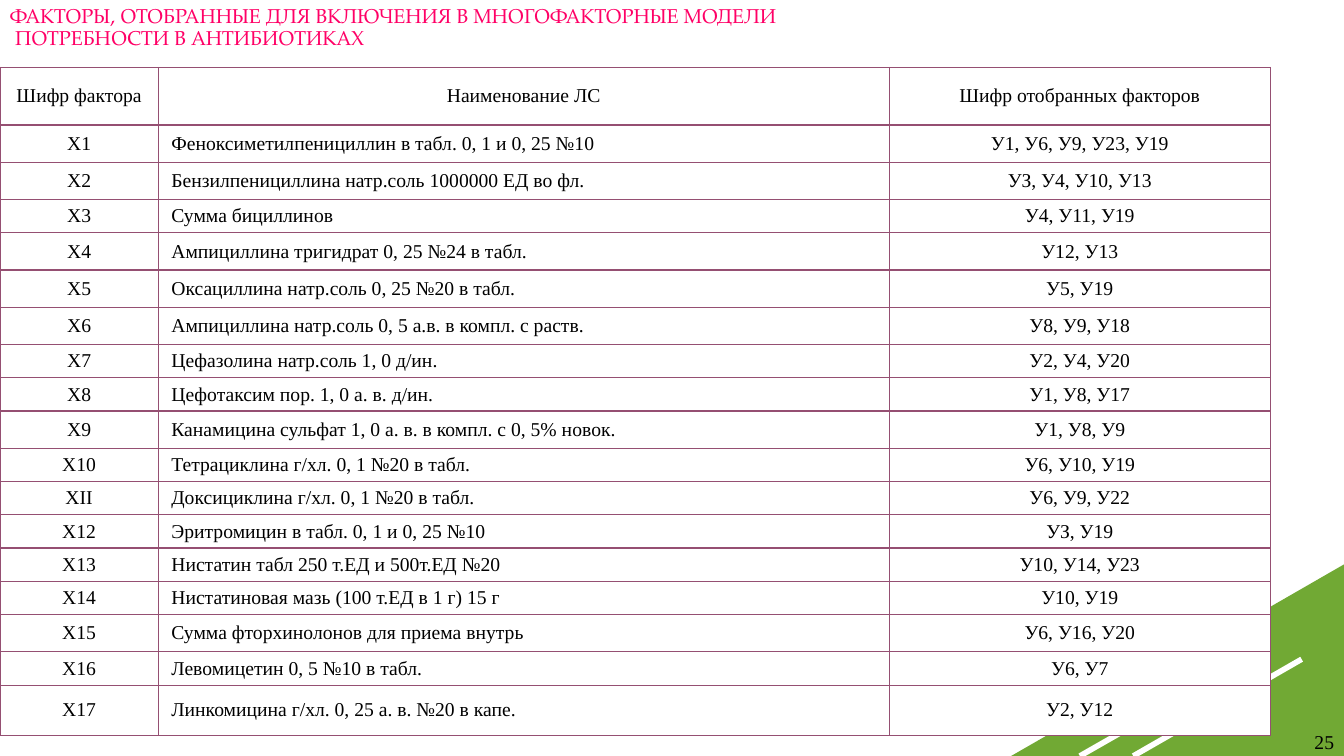
from lxml.etree import SubElement
from pptx import Presentation
from pptx.dml.color import RGBColor
from pptx.enum.shapes import MSO_CONNECTOR, MSO_SHAPE
from pptx.enum.text import MSO_ANCHOR, PP_ALIGN
from pptx.oxml.ns import qn
from pptx.util import Inches, Pt

COLORS = {
    "title": "FF0066",
    "text": "000000",
    "white": "FFFFFF",
    "green": "71A934",
    "border": "954F72",
}
TITLE_FONT = "TeX Gyre Pagella"
BODY_FONT = "Times New Roman"
COLUMN_WIDTHS = [1.57, 7.25, 3.78]
ROWS = [
    (0.57, "Шифр фактора", "Наименование ЛС", "Шифр отобранных факторов"),
    (0.37, "X1", "Феноксиметилпенициллин в табл. 0, 1 и 0, 25 №10", "У1, У6, У9, У23, У19"),
    (0.37, "Х2", "Бензилпенициллина натр.соль 1000000 ЕД во фл.", "УЗ, У4, У10, У13"),
    (0.33, "Х3", "Сумма бициллинов", "У4, У11, У19"),
    (0.37, "Х4", "Ампициллина тригидрат 0, 25 №24 в табл.", "У12, У13"),
    (0.37, "Х5", "Оксациллина натр.соль 0, 25 №20 в табл.", "У5, У19"),
    (0.37, "Х6", "Ампициллина натр.соль 0, 5 а.в. в компл. с раств.", "У8, У9, У18"),
    (0.33, "Х7", "Цефазолина натр.соль 1, 0 д/ин.", "У2, У4, У20"),
    (0.33, "Х8", "Цефотаксим пор. 1, 0 а. в. д/ин.", "У1, У8, У17"),
    (0.37, "Х9", "Канамицина сульфат 1, 0 а. в. в компл. с 0, 5% новок.", "У1, У8, У9"),
    (0.33, "Х10", "Тетрациклина г/хл. 0, 1 №20 в табл.", "У6, У10, У19"),
    (0.33, "XII", "Доксициклина г/хл. 0, 1 №20 в табл.", "У6, У9, У22"),
    (0.33, "Х12", "Эритромицин в табл. 0, 1 и 0, 25 №10", "УЗ, У19"),
    (0.33, "Х13", "Нистатин табл 250 т.ЕД и 500т.ЕД №20", "У10, У14, У23"),
    (0.33, "Х14", "Нистатиновая мазь (100 т.ЕД в 1 г) 15 г", "У10, У19"),
    (0.37, "Х15", "Сумма фторхинолонов для приема внутрь", "У6, У16, У20"),
    (0.33, "Х16", "Левомицетин 0, 5 №10 в табл.", "У6, У7"),
    (0.5, "Х17", "Линкомицина г/хл. 0, 25 а. в. №20 в капе.", "У2, У12"),
]


def format_paragraph(paragraph, alignment, size, font_name, color):
    paragraph.alignment = alignment
    paragraph.font.size = Pt(size)
    paragraph.font.name = font_name
    paragraph.font.color.rgb = RGBColor.from_string(COLORS[color])


def add_cell_borders(cell):
    properties = cell._tc.get_or_add_tcPr()
    for side in ("a:lnL", "a:lnR", "a:lnT", "a:lnB"):
        line = SubElement(properties, qn(side), w=str(Pt(1)))
        fill = SubElement(line, qn("a:solidFill"))
        SubElement(fill, qn("a:srgbClr"), val=COLORS["border"])


presentation = Presentation()
presentation.slide_width = Inches(13.33)
presentation.slide_height = Inches(7.5)
slide = presentation.slides.add_slide(presentation.slide_layouts[5])

triangle = slide.shapes.add_shape(
    MSO_SHAPE.RIGHT_TRIANGLE, Inches(10.03), Inches(5.6), Inches(3.3), Inches(1.9))
triangle._element.spPr.xfrm.set("flipH", "1")
triangle.shadow.inherit = False
triangle.fill.solid()
triangle.fill.fore_color.rgb = RGBColor.from_string(COLORS["green"])
triangle.line.fill.background()

for stripe in [(10.71, 7.5, 11.76, 6.9), (11.24, 7.5, 12.91, 6.54)]:
    connector = slide.shapes.add_connector(
        MSO_CONNECTOR.STRAIGHT, *[Inches(value) for value in stripe])
    connector.line.color.rgb = RGBColor.from_string(COLORS["white"])
    connector.line.width = Pt(4)
    SubElement(connector._element.spPr, qn("a:effectLst"))

title = slide.shapes.title
title.left, title.top, title.width, title.height = (
    Inches(value) for value in (0, 0, 12.89, 0.55))
title.text_frame.text = (
    "ФАКТОРЫ, ОТОБРАННЫЕ ДЛЯ ВКЛЮЧЕНИЯ В МНОГОФАКТОРНЫЕ МОДЕЛИ\v ПОТРЕБНОСТИ В АНТИБИОТИКАХ")
title.text_frame.vertical_anchor = MSO_ANCHOR.MIDDLE
title_paragraph = title.text_frame.paragraphs[0]
title_paragraph.line_spacing = 0.9
format_paragraph(title_paragraph, PP_ALIGN.LEFT, 14.4, TITLE_FONT, "title")

table = slide.shapes.add_table(
    len(ROWS), len(COLUMN_WIDTHS), 0, Inches(0.67), Inches(12.6), Inches(6.68)).table
for column, width in zip(table.columns, COLUMN_WIDTHS):
    column.width = Inches(width)
for row_index, (height, *texts) in enumerate(ROWS):
    table.rows[row_index].height = Inches(height)
    for column_index, text in enumerate(texts):
        cell = table.cell(row_index, column_index)
        cell.text = text
        cell.vertical_anchor = MSO_ANCHOR.MIDDLE
        cell.margin_left = cell.margin_right = Inches(0.13)
        cell.margin_top = cell.margin_bottom = Inches(0.05)
        add_cell_borders(cell)
        cell.fill.solid()
        cell.fill.fore_color.rgb = RGBColor.from_string(COLORS["white"])
        is_drug_name = row_index > 0 and column_index == 1
        paragraph = cell.text_frame.paragraphs[0]
        format_paragraph(paragraph, PP_ALIGN.LEFT if is_drug_name else PP_ALIGN.CENTER,
                         14, BODY_FONT, "text")
        paragraph.font.bold = False

page_number = slide.shapes.add_textbox(Inches(12.79), Inches(7.19), Inches(0.54), Inches(0.31))
page_number.text_frame.word_wrap = True
page_number.text_frame.text = "25"
format_paragraph(page_number.text_frame.paragraphs[0], PP_ALIGN.RIGHT, 14, BODY_FONT, "text")

presentation.save("out.pptx")
